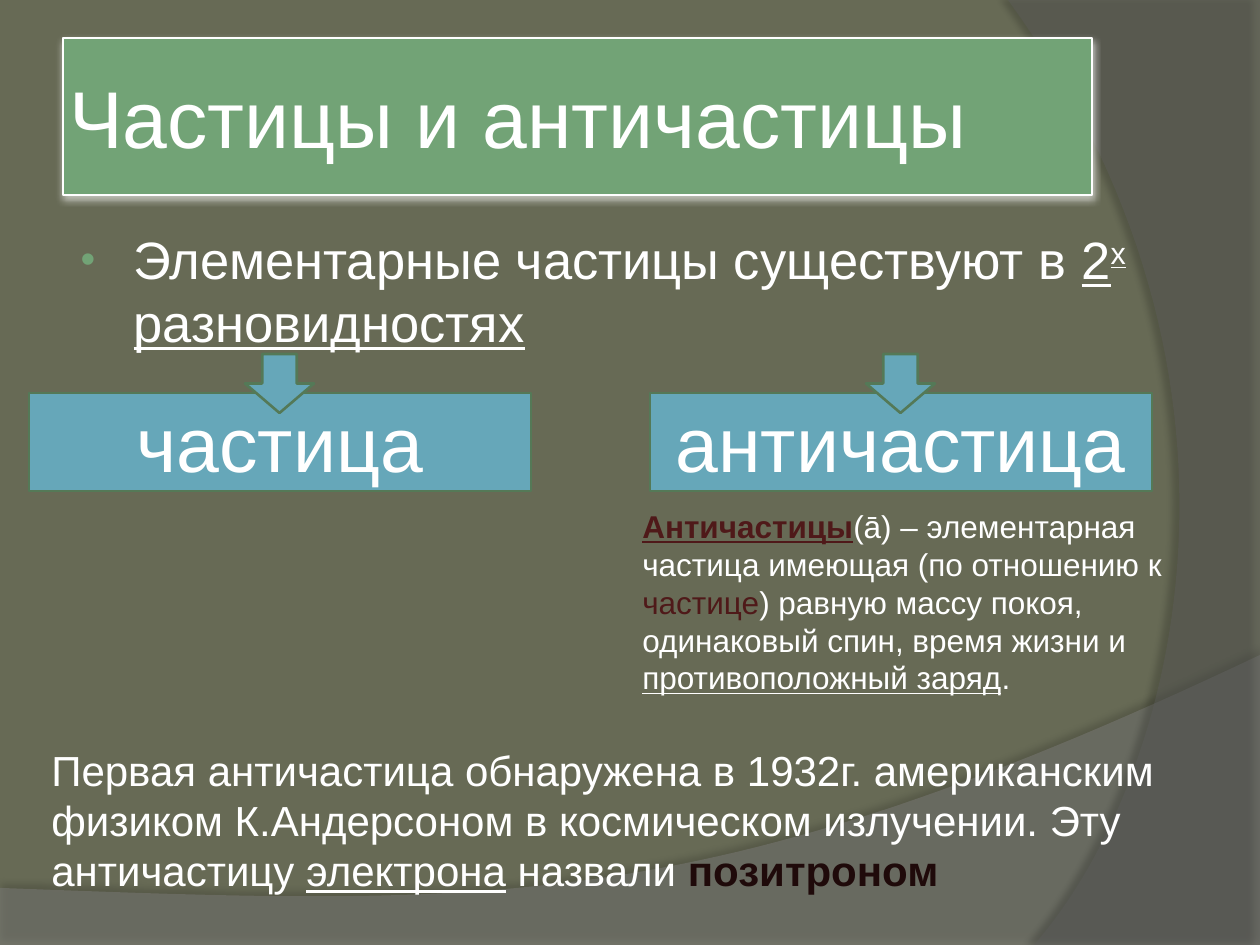
from math import comb

from lxml import etree
from pptx import Presentation
from pptx.dml.color import RGBColor
from pptx.enum.shapes import MSO_SHAPE
from pptx.enum.text import MSO_ANCHOR, MSO_AUTO_SIZE, PP_ALIGN
from pptx.oxml.ns import qn
from pptx.util import Emu, Pt

RECT, DOWN = MSO_SHAPE.RECTANGLE, MSO_SHAPE.DOWN_ARROW
MIDDLE, TOP = MSO_ANCHOR.MIDDLE, MSO_ANCHOR.TOP
LEFT, CENTER = PP_ALIGN.LEFT, PP_ALIGN.CENTER
FIT, NO_FIT = MSO_AUTO_SIZE.SHAPE_TO_FIT_TEXT, MSO_AUTO_SIZE.NONE

SCALE = 914400 / 126
WHITE, GREEN, BLUE, EDGE = "FFFFFF", "72A376", "66A7B9", "547957"
MAROON, DARK = "4F1919", "1F0A0A"
UNDERLINED = {"underline": True}

TITLE = [("Частицы и античастицы", {})]
KINDS = [("Элементарные частицы существуют в ", {}), ("2", UNDERLINED),
         ("х", {"underline": True, "raised": 30}),
         (" разновидностях", UNDERLINED)]
BRANCHES = [("частица", 29), ("античастица", 650)]
DEFINITION = [
    ("Античастицы", {"bold": True, "underline": True, "color": MAROON}),
    ("(ā) – элементарная частица имеющая (по отношению к ", {}),
    ("частице", {"color": MAROON}),
    (") равную массу покоя, одинаковый спин, время жизни и ", {}),
    ("противоположный заряд", UNDERLINED), (".", {})]
DISCOVERY = [
    ("Первая античастица обнаружена в 1932г. американским физиком К.Андерсоном "
     "в космическом излучении. Эту античастицу ", {}),
    ("электрона", UNDERLINED), (" назвали ", {}),
    ("позитроном", {"bold": True, "color": DARK})]
NOTES = [(DEFINITION, (630, 501, 630, 204), 18),
         (DISCOVERY, (39, 738, 1162, 165), 24)]
WAVES = [
    {"corners": [(0, 888), (0, 945), (1260, 945)],
     "curve": [(1260, 655), (704, 919), (493, 906), (0, 888)],
     "fill": ("7F7F7F", 45), "shadow": ("000000", 35, 4, 3.5, 270)},
    {"corners": [(1260, 0), (1260, 945)],
     "curve": [(1034, 945), (1178, 780), (1283, 378), (1008, 0)],
     "fill": ("5E5E5E", 40), "shadow": ("000000", 45, 4, 4, 180)}]


def px(value):
    return Emu(round(value * SCALE))


def rgb(value):
    return RGBColor.from_string(value)


def add_child(parent, tag, **values):
    return etree.SubElement(parent, qn(tag), {k: str(v) for k, v in values.items()})


def place(part, box):
    for side, value in zip(("left", "top", "width", "height"), box):
        setattr(part, side, px(value))


def paint(part, fill, line=None):
    part.shadow.inherit = False
    part.fill.solid()
    part.fill.fore_color.rgb = rgb(fill)
    if line:
        part.line.color.rgb = rgb(line)
        part.line.width = Pt(1.5)
    else:
        part.line.fill.background()


def cast_shadow(part, color, alpha, blur, distance, angle):
    part.shadow.inherit = False
    effects = part.element.spPr.find(qn("a:effectLst"))
    shadow = add_child(effects, "a:outerShdw", blurRad=Pt(blur), dist=Pt(distance),
                       dir=angle * 60000, algn="ctr", rotWithShape=0)
    tint = add_child(shadow, "a:srgbClr", val=color)
    add_child(tint, "a:alpha", val=alpha * 1000)


def write(part, runs, size, anchor=TOP, align=LEFT, fit=NO_FIT):
    frame = part.text_frame
    for name, value in {"word_wrap": True, "auto_size": fit,
                        "vertical_anchor": anchor}.items():
        setattr(frame, name, value)
    paragraph = frame.paragraphs[0]
    paragraph.alignment = align
    for words, look in runs:
        run = paragraph.add_run()
        run.text = words
        font = {"name": "Arial", "size": Pt(size), "bold": look.get("bold", False),
                "underline": look.get("underline", False)}
        for name, value in font.items():
            setattr(run.font, name, value)
        run.font.color.rgb = rgb(look.get("color", WHITE))
        if "raised" in look:
            run.font._element.set("baseline", str(look["raised"] * 1000))
    return paragraph


def bezier(points, steps=60):
    for step in range(steps + 1):
        t = step / steps
        weights = [comb(3, i) * t ** i * (1 - t) ** (3 - i) for i in range(4)]
        yield tuple(sum(w * p[axis] for w, p in zip(weights, points))
                    for axis in (0, 1))


def add_wave(slide, wave, depth):
    outline = [(px(x), px(y)) for x, y in [*wave["corners"], *bezier(wave["curve"])]]
    builder = slide.shapes.build_freeform(*outline[0], scale=1.0)
    builder.add_line_segments(outline[1:], close=True)
    part = builder.convert_to_shape()
    color, alpha = wave["fill"]
    paint(part, color)
    tint = part.element.spPr.find(qn("a:solidFill"))[0]
    add_child(tint, "a:alpha", val=alpha * 1000)
    cast_shadow(part, *wave["shadow"])
    part.element.getparent().insert(2 + depth, part.element)


def main():
    deck = Presentation()
    deck.slide_width, deck.slide_height = px(1260), px(945)
    slide = deck.slides.add_slide(deck.slide_layouts[1])
    slide.background.fill.solid()
    slide.background.fill.fore_color.rgb = rgb("676A55")
    for depth, wave in enumerate(WAVES):
        add_wave(slide, wave, depth)

    title, kinds = slide.shapes.title, slide.placeholders[1]
    place(title, (63, 38, 1029, 157))
    title.fill.solid()
    title.fill.fore_color.rgb = rgb(GREEN)
    title.line.color.rgb = rgb(WHITE)
    title.line.width = Pt(1.5)
    cast_shadow(title, WHITE, 60, 4, 2, 90)
    for side in ("left", "top", "right", "bottom"):
        setattr(title.text_frame, "margin_" + side, px(6))
    write(title, TITLE, 46, MIDDLE)

    place(kinds, (63, 221, 1138, 311))
    bullet = write(kinds, KINDS, 30)._p.get_or_add_pPr()
    bullet.set("marL", str(px(58)))
    bullet.set("indent", str(px(-53)))
    add_child(add_child(bullet, "a:buClr"), "a:srgbClr", val=GREEN)
    add_child(bullet, "a:buSzPct", val=80000)
    add_child(bullet, "a:buFont", typeface="Arial")
    add_child(bullet, "a:buChar", char="•")

    for name, left in BRANCHES:
        branch = slide.shapes.add_shape(RECT, px(left), px(393), px(502), px(98))
        paint(branch, BLUE, EDGE)
        write(branch, [(name, {})], 44, MIDDLE, CENTER)
    for _, left in BRANCHES:
        middle = left + 502 / 2
        arrow = slide.shapes.add_shape(DOWN, px(middle - 35), px(354), px(69), px(59))
        paint(arrow, BLUE, EDGE)

    for runs, box, size in NOTES:
        note = slide.shapes.add_textbox(*map(px, box))
        write(note, runs, size, fit=FIT).space_before = Pt(size / 2)

    deck.save("out.pptx")


if __name__ == "__main__":
    main()
